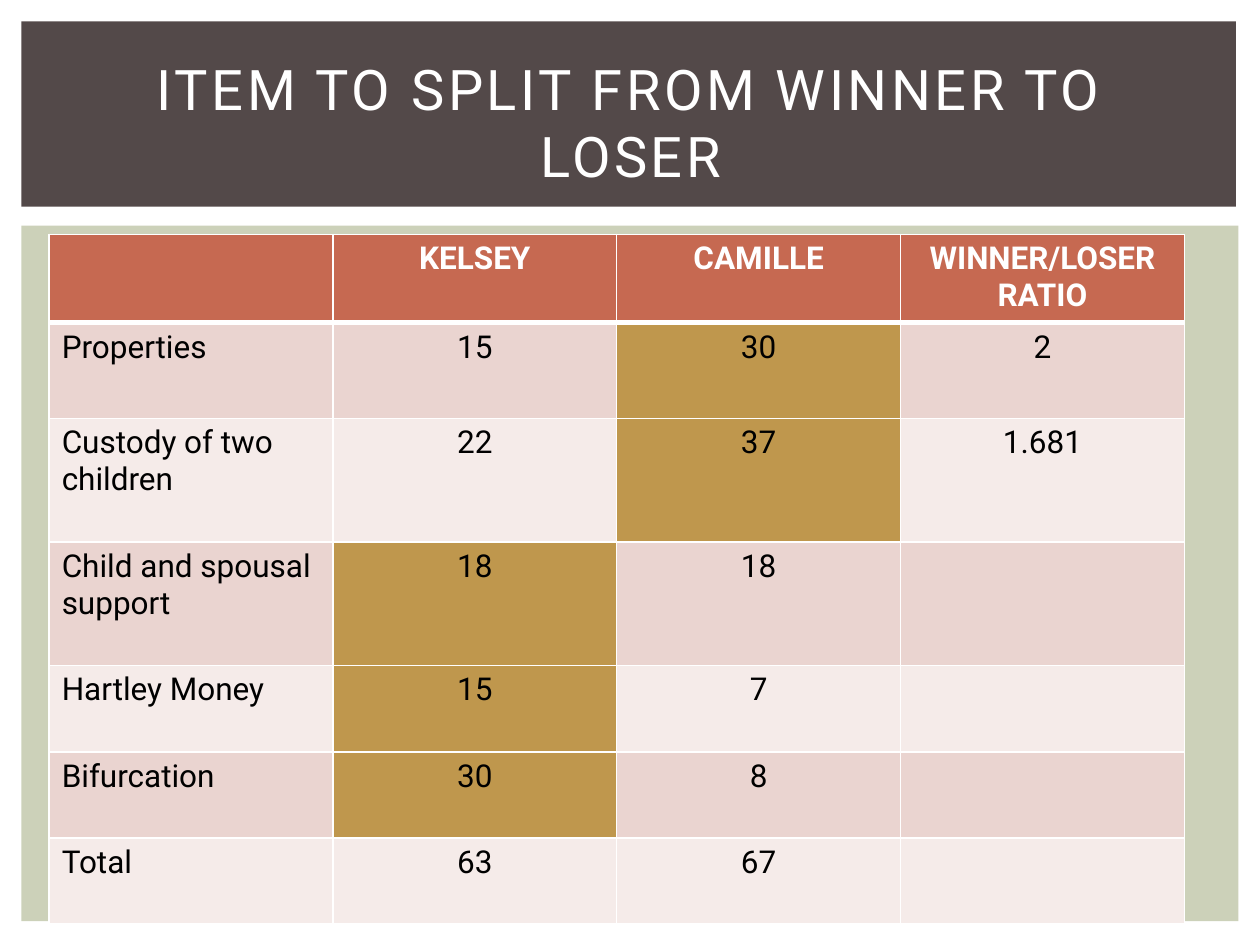
from typing import NamedTuple

from lxml import etree
from pptx import Presentation
from pptx.dml.color import RGBColor
from pptx.enum.shapes import MSO_SHAPE
from pptx.enum.text import MSO_ANCHOR, PP_ALIGN
from pptx.oxml.ns import qn
from pptx.util import Inches, Pt

RECTANGLE = MSO_SHAPE.RECTANGLE
LEFT, CENTER = PP_ALIGN.LEFT, PP_ALIGN.CENTER
MIDDLE = MSO_ANCHOR.MIDDLE

FONT = "Roboto"
WHITE, BLACK = "FFFFFF", "000000"
SAGE, BROWN = "CCD1B9", "534949"
RUST, GOLD = "C66951", "BF974D"
BANDS = ("EAD4D0", "F5EBE9")


class Area(NamedTuple):
    left: float
    top: float
    width: float
    height: float

    def lengths(self):
        return [Inches(value) for value in self]


class Item(NamedTuple):
    label: str
    kelsey: str
    camille: str
    ratio: str
    height: float
    winner: int | None = None


KELSEY, CAMILLE = 1, 2
HEADER = Item("", "KELSEY", "CAMILLE", "WINNER/LOSER RATIO", 0.67)
ITEMS = [
    Item("Properties", "15", "30", "2", 0.76, CAMILLE),
    Item("Custody of two children", "22", "37", "1.681", 0.98, CAMILLE),
    Item("Child and spousal support", "18", "18", "", 0.98, KELSEY),
    Item("Hartley Money", "15", "7", "", 0.69, KELSEY),
    Item("Bifurcation", "30", "8", "", 0.68, KELSEY),
    Item("Total", "63", "67", "", 0.68),
]
COLUMNS = 4


def color(value: str) -> RGBColor:
    return RGBColor.from_string(value)


def write(frame, text: str, *, size: float, ink: str, align=CENTER,
          bold: bool = False, spacing: float = 0) -> None:
    para = frame.paragraphs[0]
    para.alignment = align
    para.font.size = Pt(size)
    if not text:
        return
    span = para.add_run()
    span.text = text
    span.font.name = FONT
    span.font.size = Pt(size)
    span.font.bold = bold
    span.font.color.rgb = color(ink)
    if spacing:
        span._r.get_or_add_rPr().set("spc", str(int(spacing * 100)))


def add_panel(page, area: Area, fill: str) -> None:
    panel = page.shapes.add_shape(RECTANGLE, *area.lengths())
    panel.shadow.inherit = False
    panel.fill.solid()
    panel.fill.fore_color.rgb = color(fill)
    panel.line.fill.background()


def add_title(page, area: Area, text: str) -> None:
    box = page.shapes.add_textbox(*area.lengths())
    frame = box.text_frame
    frame.word_wrap = True
    frame.vertical_anchor = MIDDLE
    frame.margin_left = frame.margin_right = Inches(0.15)
    write(frame, text, size=32, ink=WHITE, spacing=2)


def set_borders(cell, bottom: float) -> None:
    properties = cell._tc.get_or_add_tcPr()
    for side, width in (("L", 1), ("R", 1), ("T", 1), ("B", bottom)):
        line = etree.SubElement(properties, qn(f"a:ln{side}"), w=str(Pt(width)))
        fill = etree.SubElement(line, qn("a:solidFill"))
        etree.SubElement(fill, qn("a:srgbClr"), val=WHITE)


def add_score_table(page, left: float, top: float, width: float) -> None:
    items = [HEADER, *ITEMS]
    area = Area(left, top, width, sum(item.height for item in items))
    table = page.shapes.add_table(len(items), COLUMNS, *area.lengths()).table
    for column in table.columns:
        column.width = Inches(width / COLUMNS)
    for row, item in enumerate(items):
        table.rows[row].height = Inches(item.height)
        is_header = row == 0
        band = RUST if is_header else BANDS[(row - 1) % 2]
        for column, text in enumerate(item[:COLUMNS]):
            cell = table.cell(row, column)
            set_borders(cell, bottom=3 if is_header else 1)
            cell.fill.solid()
            cell.fill.fore_color.rgb = color(GOLD if column == item.winner else band)
            write(cell.text_frame, text, size=18, bold=is_header,
                  ink=WHITE if is_header else BLACK,
                  align=CENTER if column else LEFT)


def main() -> None:
    deck = Presentation()
    deck.slide_width, deck.slide_height = Inches(10), Inches(7.5)
    page = deck.slides.add_slide(deck.slide_layouts[6])
    add_panel(page, Area(0.17, 1.79, 9.66, 5.52), SAGE)
    add_panel(page, Area(0.17, 0.17, 9.64, 1.47), BROWN)
    add_title(page, Area(0.42, 0.39, 9.17, 1.15), "ITEM TO SPLIT FROM WINNER TO LOSER")
    add_score_table(page, left=0.39, top=1.86, width=9.01)
    deck.save("out.pptx")


if __name__ == "__main__":
    main()
